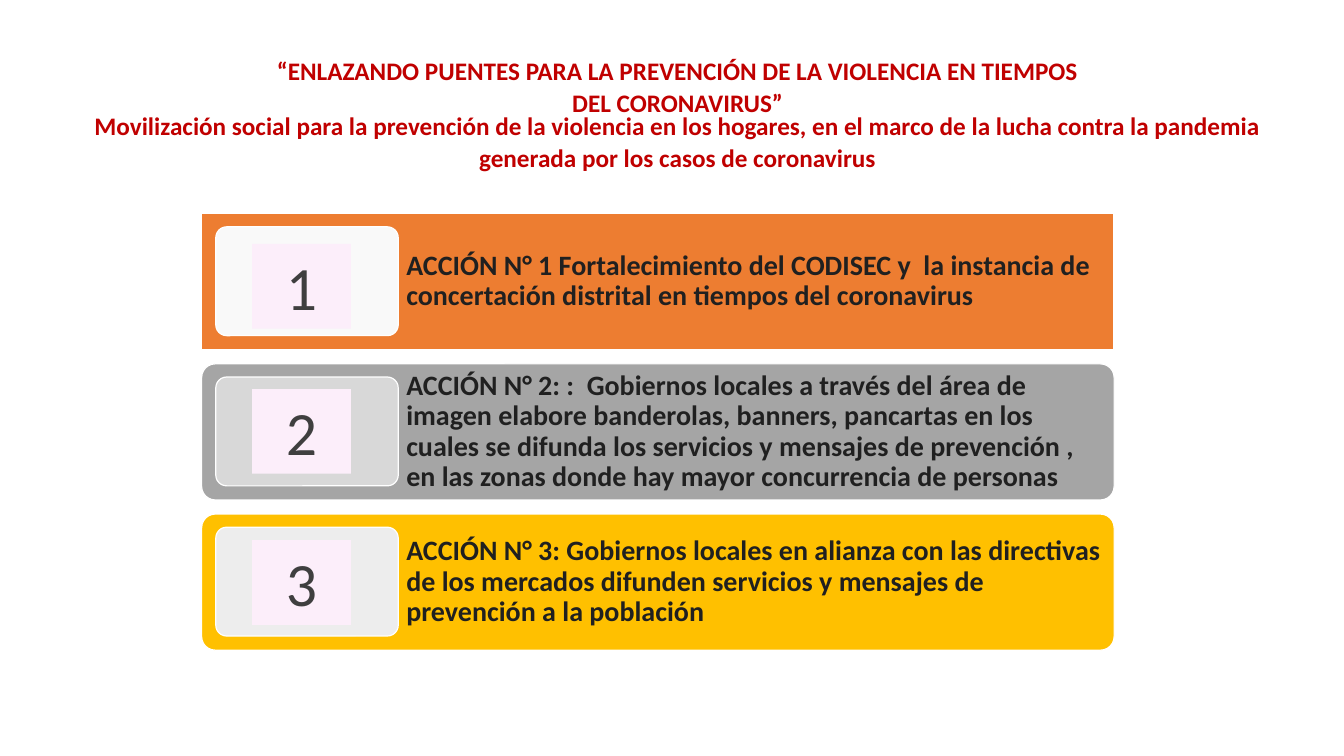
"""Build the slide listing three actions for preventing violence."""
from pptx import Presentation
from pptx.dml.color import RGBColor
from pptx.enum.shapes import MSO_SHAPE
from pptx.enum.text import MSO_ANCHOR, PP_ALIGN
from pptx.util import Emu, Pt

RECT, ROUND = MSO_SHAPE.RECTANGLE, MSO_SHAPE.ROUNDED_RECTANGLE
TOP, MIDDLE = MSO_ANCHOR.TOP, MSO_ANCHOR.MIDDLE
LEFT, CENTER = PP_ALIGN.LEFT, PP_ALIGN.CENTER
PX = 9144

prs = Presentation()
prs.slide_width, prs.slide_height = Emu(1333 * PX), Emu(750 * PX)
s = prs.slides.add_slide(prs.slide_layouts[6])

HEADING = dict(size=18, color="C00000", bold=True, align=CENTER,
               anchor=TOP, spacing=1.07, inset=(10, 5))
ACTION = dict(size=20, color="202020", bold=True, align=LEFT,
              anchor=MIDDLE, spacing=0.9, inset=(8, 8))
NUMBER = dict(size=44, color="3F3F3F", bold=False, align=CENTER,
              anchor=TOP, spacing=1.0, inset=(10, 5))


def add_box(kind, box, fill, line=None):
    sp = s.shapes.add_shape(kind, *(Emu(v * PX) for v in box))
    sp.shadow.inherit = False
    sp.fill.solid()
    sp.fill.fore_color.rgb = RGBColor.from_string(fill)
    if kind == ROUND:
        sp.adjustments[0] = 0.1
    if line:
        sp.line.color.rgb = RGBColor.from_string("FFFFFF")
        sp.line.width = Pt(line)
    else:
        sp.line.fill.background()
    return sp


def add_text(box, text, fmt):
    tf = s.shapes.add_textbox(*(Emu(v * PX) for v in box)).text_frame
    tf.word_wrap = True
    tf.vertical_anchor = fmt["anchor"]
    tf.margin_left = tf.margin_right = Emu(fmt["inset"][0] * PX)
    tf.margin_top = tf.margin_bottom = Emu(fmt["inset"][1] * PX)
    p = tf.paragraphs[0]
    p.alignment, p.line_spacing = fmt["align"], fmt["spacing"]
    r = p.add_run()
    r.text = text
    for name, value in dict(name="Calibri", size=Pt(fmt["size"]), bold=fmt["bold"]).items():
        setattr(r.font, name, value)
    r.font.color.rgb = RGBColor.from_string(fmt["color"])


add_text((250, 48, 844, 75), "“ENLAZANDO PUENTES PARA LA PREVENCIÓN DE LA VIOLENCIA "
         "EN TIEMPOS DEL CORONAVIRUS”", HEADING)
add_text((82, 102, 1180, 75), "Movilización social para la prevención de la violencia en los "
         "hogares, en el marco de la lucha contra la pandemia generada por los casos de "
         "coronavirus", HEADING)

actions = [
    (RECT, "ED7D31", "F9F9F9", 242,
     "ACCIÓN N° 1 Fortalecimiento del CODISEC y  la instancia de concertación "
     "distrital en tiempos del coronavirus"),
    (ROUND, "A5A5A5", "D8D8D8", 386,
     "ACCIÓN N° 2: :  Gobiernos locales a través del área de imagen elabore banderolas, "
     "banners, pancartas en los cuales se difunda los servicios y mensajes de prevención , "
     "en las zonas donde hay mayor concurrencia de personas"),
    (ROUND, "FFC000", "EDEDED", 536,
     "ACCIÓN N° 3: Gobiernos locales en alianza con las directivas de los mercados "
     "difunden servicios y mensajes de prevención a la población"),
]
for i, (kind, band, badge, number_top, text) in enumerate(actions):
    top = 212 + 149 * i
    add_box(kind, (200, top, 905, 135), band, 0.85)
    add_text((395, top, 710, 135), text, ACTION)
    add_box(ROUND, (214, top + 13, 181, 108), badge, 0.85)
    number_box = (250, number_top, 98, 84)
    add_box(RECT, number_box, "FCEEFA")
    add_text(number_box, str(i + 1), NUMBER)

prs.save("out.pptx")
